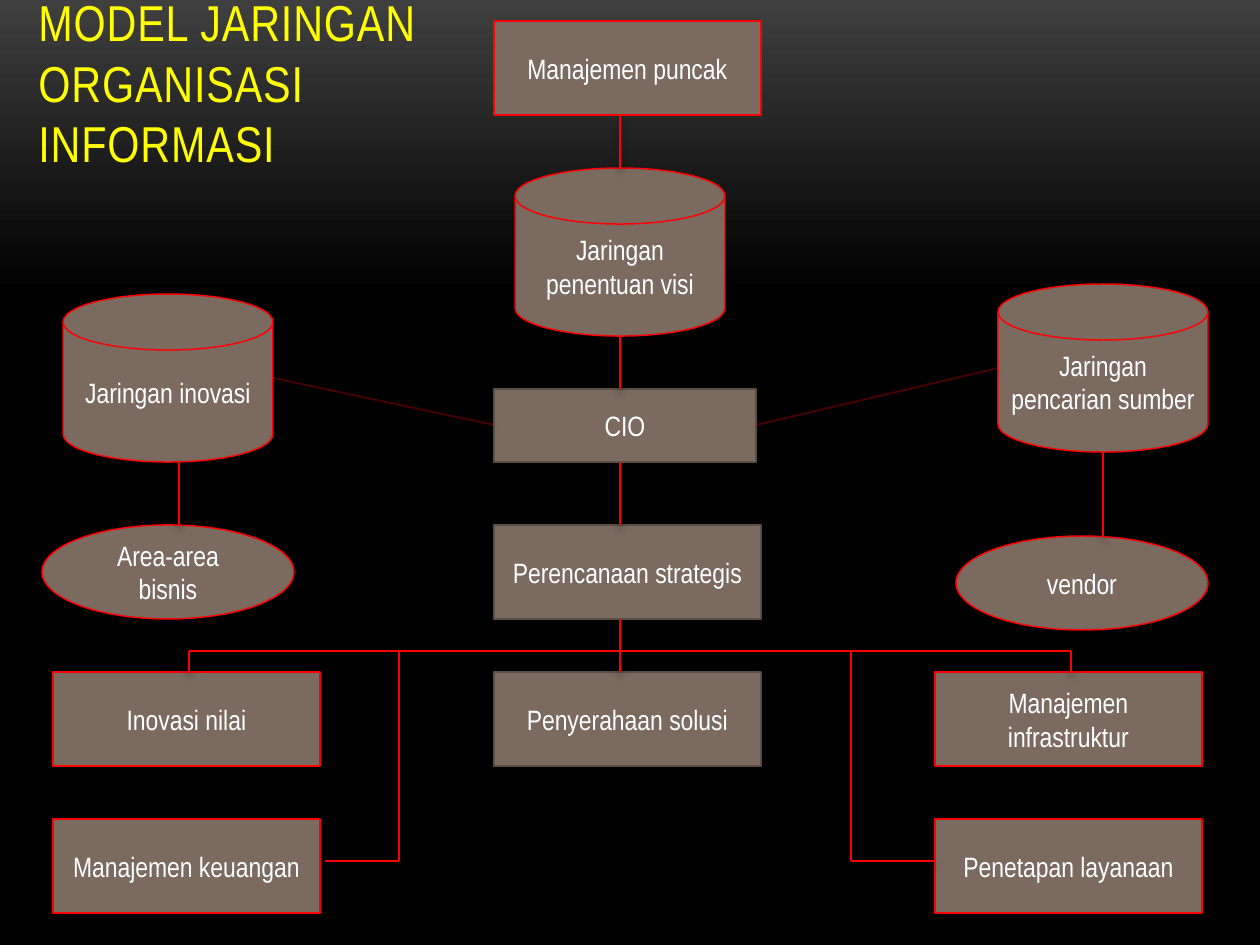
import pptx
import pptx.util
import pptx.dml.color
import pptx.enum.shapes
import pptx.enum.text
import pptx.oxml
import pptx.oxml.ns

SCALE = 914400 / 126
FONT = "Arial Narrow"
COLORS = {"top": "3F3F3F", "black": "000000", "box": "7A6A60", "red": "FF0000",
          "brown": "5A4E47", "white": "FFFFFF", "yellow": "FFFF00"}
KINDS = {
    "box": (pptx.enum.shapes.MSO_SHAPE.RECTANGLE, 267, 94),
    "cio": (pptx.enum.shapes.MSO_SHAPE.RECTANGLE, 262, 73),
    "disk": (pptx.enum.shapes.MSO_SHAPE.FLOWCHART_MAGNETIC_DISK, 210, 168),
    "oval": (pptx.enum.shapes.MSO_SHAPE.OVAL, 252, 94),
}
LEFT, MIDDLE, RIGHT = 53, 494, 935
TITLE = "MODEL JARINGAN\vORGANISASI INFORMASI"
NODES = [
    ("Manajemen puncak", "box", MIDDLE, 21, "red"),
    ("CIO", "cio", MIDDLE, 389, "brown"),
    ("Perencanaan strategis", "box", MIDDLE, 525, "brown"),
    ("Manajemen keuangan", "box", LEFT, 819, "red"),
    ("Inovasi nilai", "box", LEFT, 672, "red"),
    ("Penyerahaan solusi", "box", MIDDLE, 672, "brown"),
    ("Penetapan layanaan", "box", RIGHT, 819, "red"),
    ("Manajemen infrastruktur", "box", RIGHT, 672, "red"),
    ("Jaringan inovasi", "disk", 63, 294, "red"),
    ("Jaringan penentuan visi", "disk", 515, 168, "red"),
    ("Jaringan pencarian sumber", "disk", 998, 284, "red"),
    ("Area-area bisnis", "oval", 42, 525, "red"),
    ("vendor", "oval", 956, 536, "red"),
]
FAINT_LINKS = [(273, 378, 494, 425), (756, 425, 998, 368)]
AXIS, BUS = 620, 651
LINKS = [
    (AXIS, 115, AXIS, 168), (AXIS, 336, AXIS, 389), (AXIS, 462, AXIS, 525),
    (AXIS, 619, AXIS, 672), (179, 462, 179, 525), (1103, 452, 1103, 536),
    (189, BUS, 1071, BUS), (189, BUS, 189, 672), (1071, BUS, 1071, 672),
    (399, BUS, 399, 861), (399, 861, 325, 861),
    (851, BUS, 851, 861), (851, 861, 935, 861),
]
SHADOW = (
    '<a:effectLst xmlns:a="http://schemas.openxmlformats.org/drawingml/2006/main">'
    '<a:outerShdw blurRad="50800" dist="43000" dir="5400000" rotWithShape="0">'
    '<a:srgbClr val="000000"><a:alpha val="40000"/></a:srgbClr>'
    '</a:outerShdw></a:effectLst>'
)


def px(*lengths):
    return [round(length * SCALE) for length in lengths]


def color(name):
    return pptx.dml.color.RGBColor.from_string(COLORS[name])


def style_text(shape, size, name, anchor, alignment):
    frame = shape.text_frame
    frame.word_wrap = True
    frame.vertical_anchor = anchor
    for paragraph in frame.paragraphs:
        paragraph.alignment = alignment
        for run in paragraph.runs:
            run.font.name = FONT
            run.font.size = pptx.util.Pt(size)
            run.font.color.rgb = color(name)


def add_node(slide, text, kind, left, top, outline):
    preset, width, height = KINDS[kind]
    shape = slide.shapes.add_shape(preset, *px(left, top, width, height))
    shape.shadow.inherit = False
    shape.fill.solid()
    shape.fill.fore_color.rgb = color("box")
    shape.line.color.rgb = color(outline)
    shape.line.width = pptx.util.Pt(0.85)
    shape.text_frame.text = text
    style_text(shape, 16, "white", pptx.enum.text.MSO_ANCHOR.MIDDLE,
               pptx.enum.text.PP_ALIGN.CENTER)


def add_link(slide, ends, faint):
    link = slide.shapes.add_connector(
        pptx.enum.shapes.MSO_CONNECTOR.STRAIGHT, *px(*ends))
    link.line.color.rgb = color("red")
    link.line.width = pptx.util.Pt(1.2)
    properties = link._element.spPr
    if faint:
        tint = properties.find(".//" + pptx.oxml.ns.qn("a:srgbClr"))
        tint.makeelement
        alpha = tint.makeelement(pptx.oxml.ns.qn("a:alpha"), {"val": "25000"})
        tint.append(alpha)
    properties.append(pptx.oxml.parse_xml(SHADOW))


def add_title(slide):
    title = slide.shapes.add_textbox(*px(26, 21, 494, 158))
    title.text_frame.text = TITLE
    style_text(title, 28.8, "yellow", pptx.enum.text.MSO_ANCHOR.BOTTOM,
               pptx.enum.text.PP_ALIGN.LEFT)
    for run in title.text_frame.paragraphs[0].runs:
        run.font._element.set("spc", "50")


def add_background(slide):
    fill = slide.background.fill
    fill.gradient()
    fill.gradient_angle = 270
    for stop, name, position in zip(fill.gradient_stops, ("top", "black"), (0, 0.31)):
        stop.color.rgb = color(name)
        stop.position = position


def main():
    presentation = pptx.Presentation()
    presentation.slide_width, presentation.slide_height = px(1260, 945)
    slide = presentation.slides.add_slide(presentation.slide_layouts[6])
    add_background(slide)
    for node in NODES:
        add_node(slide, *node)
    for links, faint in ((FAINT_LINKS, True), (LINKS, False)):
        for ends in links:
            add_link(slide, ends, faint)
    add_title(slide)
    presentation.save("out.pptx")


if __name__ == "__main__":
    main()
